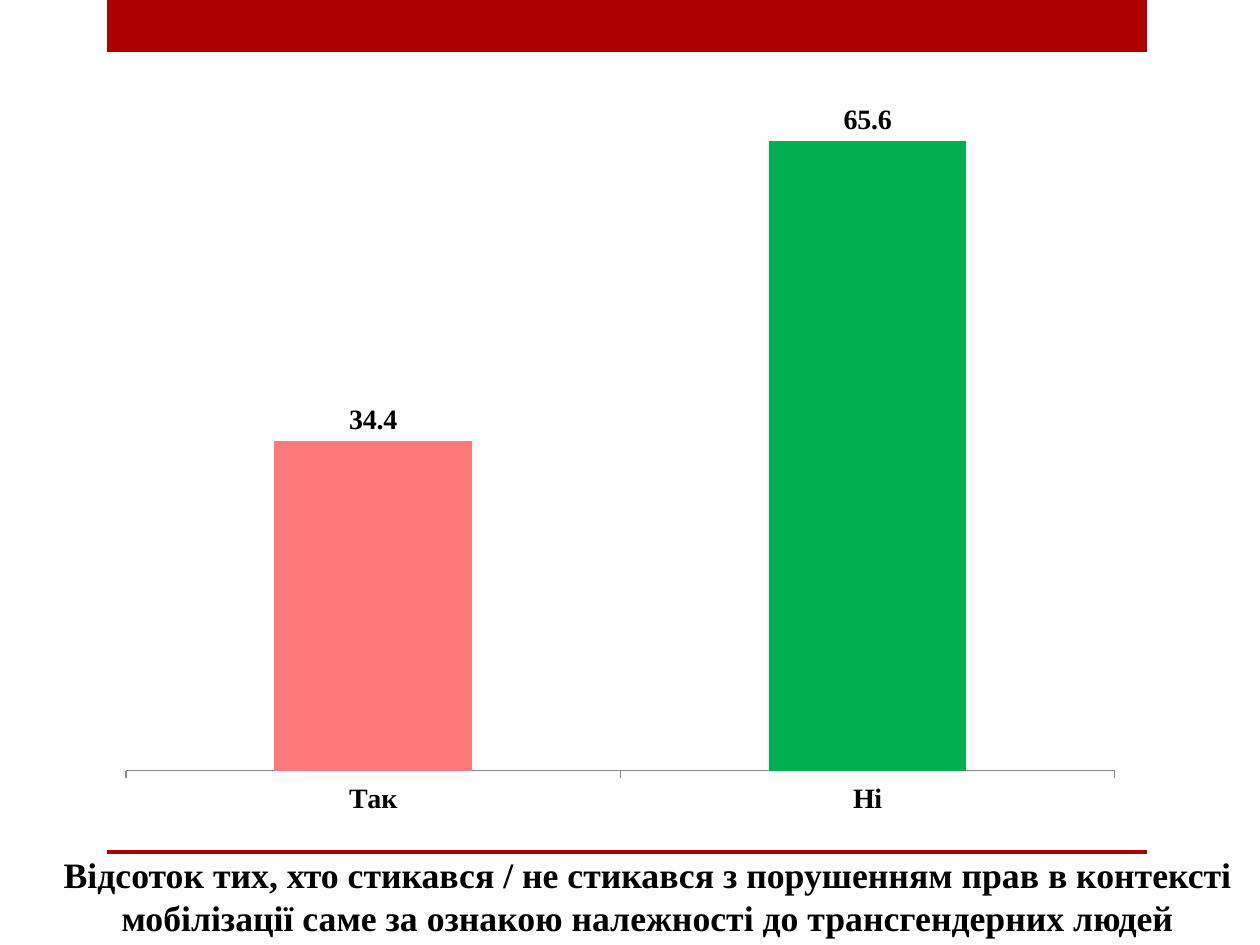
from lxml import etree
from pptx import Presentation
from pptx.chart.data import CategoryChartData
from pptx.dml.color import RGBColor
from pptx.enum.chart import XL_CHART_TYPE, XL_LABEL_POSITION, XL_TICK_MARK
from pptx.enum.shapes import MSO_SHAPE
from pptx.enum.text import MSO_ANCHOR, MSO_AUTO_SIZE, PP_ALIGN
from pptx.oxml.ns import qn
from pptx.util import Pt

COLUMN = XL_CHART_TYPE.COLUMN_CLUSTERED
OUT_END = XL_LABEL_POSITION.OUTSIDE_END
TICK_OUT = XL_TICK_MARK.OUTSIDE
RECT = MSO_SHAPE.RECTANGLE

# Content
TITLE = ("Відсоток тих, хто стикався / не стикався з порушенням прав в контексті "
         "мобілізації саме за ознакою належності до трансгендерних людей")
BARS = [("Так", 34.4, "pink"), ("Ні", 65.6, "green")]
COLORS = {"red": "AD0101", "pink": "FE7979", "green": "00B050",
          "text": "000000", "axis": "888888"}
FONT = "Times New Roman"
FORMAT = "###0.0"

# Places in px: left, top, width, height
PX = 914400 // 126
BANDS = [(107, 0, 1040, 52), (107, 850, 1040, 4)]
TITLE_BOX = (35, 857, 1225, 88)
CHART_BOX = (105, 84, 1031, 746)
PLOT_BOX = (126, 99, 989, 672)


def emu(box):
    return [v * PX for v in box]


def paint(fill, name):
    fill.solid()
    fill.fore_color.rgb = RGBColor.from_string(COLORS[name])


def style(font, size):
    font.name, font.size, font.bold = FONT, Pt(size), True
    font.color.rgb = RGBColor.from_string(COLORS["text"])


def set_plot(chart):
    """Pin the inner plot area as fractions of the chart frame."""
    left, top, wide, high = CHART_BOX
    x, y, w, h = PLOT_BOX
    area = chart._chartSpace.chart.plotArea
    for old in area.findall(qn("c:layout")):
        area.remove(old)
    layout = etree.Element(qn("c:layout"))
    area.insert(0, layout)
    manual = etree.SubElement(layout, qn("c:manualLayout"))
    parts = [("layoutTarget", "inner"), ("xMode", "edge"), ("yMode", "edge"),
             ("x", (x - left) / wide), ("y", (y - top) / high),
             ("w", w / wide), ("h", h / high)]
    for tag, val in parts:
        etree.SubElement(manual, qn("c:" + tag)).set("val", str(val))


prs = Presentation()
prs.slide_width, prs.slide_height = emu((1260, 945))
slide = prs.slides.add_slide(prs.slide_layouts[5])

# Red bands
for box in BANDS:
    band = slide.shapes.add_shape(RECT, *emu(box))
    band.shadow.inherit = False
    paint(band.fill, "red")
    band.line.fill.background()

# Title under the chart
title = slide.shapes.title
title.left, title.top, title.width, title.height = emu(TITLE_BOX)
frame = title.text_frame
frame.word_wrap = True
frame.auto_size = MSO_AUTO_SIZE.NONE
frame.vertical_anchor = MSO_ANCHOR.BOTTOM
para = frame.paragraphs[0]
para.alignment = PP_ALIGN.CENTER
run = para.add_run()
run.text = TITLE
style(run.font, 20.4)

# Column chart
data = CategoryChartData(number_format=FORMAT)
data.categories = [name for name, _, _ in BARS]
data.add_series("Series 1", [val for _, val, _ in BARS])
chart = slide.shapes.add_chart(COLUMN, *emu(CHART_BOX), data).chart
chart.has_legend = chart.has_title = False
style(chart.font, 16)
set_plot(chart)

plot = chart.plots[0]
plot.gap_width = 150
plot.vary_by_categories = False
series = plot.series[0]
paint(series.format.fill, BARS[0][2])
for i, (_, _, color) in enumerate(BARS[1:], 1):
    paint(series.points[i].format.fill, color)

labels = series.data_labels
labels.show_value = True
labels.number_format, labels.number_format_is_linked = FORMAT, False
labels.position = OUT_END
style(labels.font, 16)

# Axes
cats = chart.category_axis
cats.major_tick_mark = TICK_OUT
cats.has_major_gridlines = False
paint(cats.format.line.fill, "axis")
style(cats.tick_labels.font, 16)
vals = chart.value_axis
vals.minimum_scale, vals.maximum_scale = 0, 70
vals.has_major_gridlines = False
vals.visible = False

prs.save("out.pptx")
